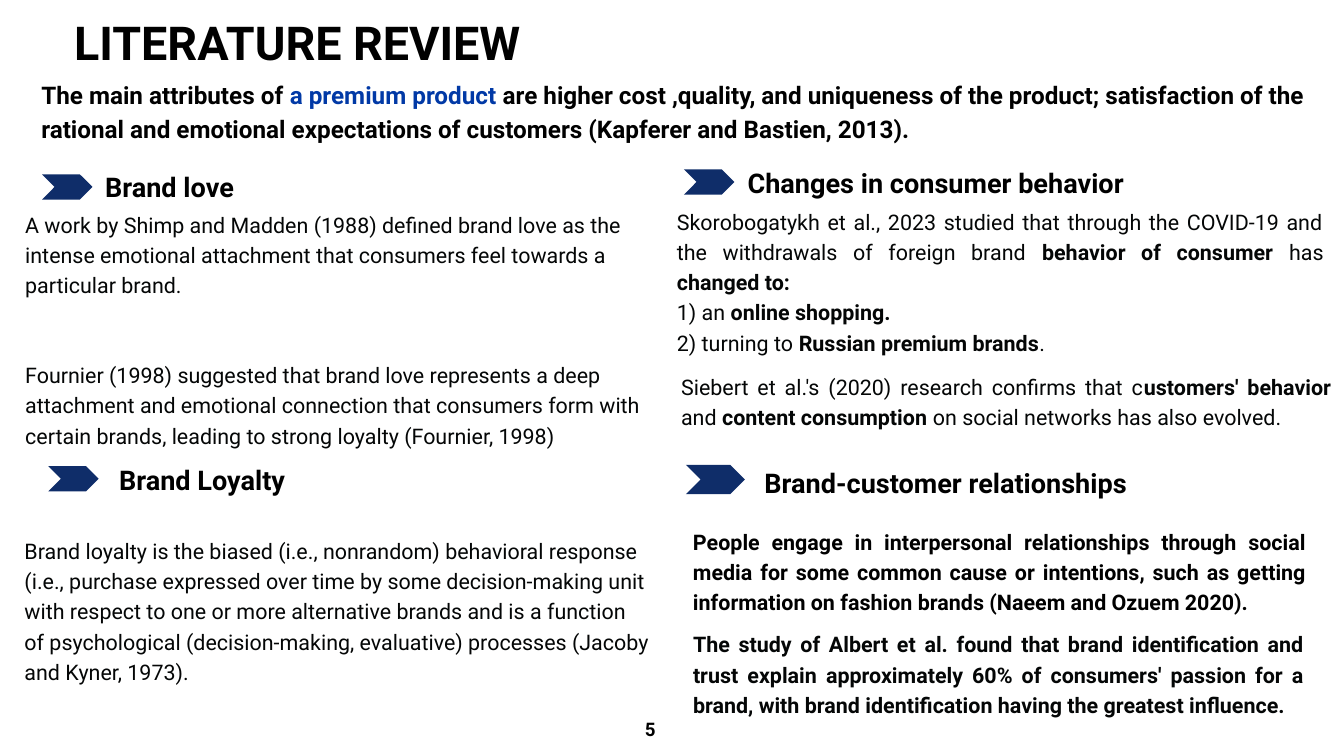
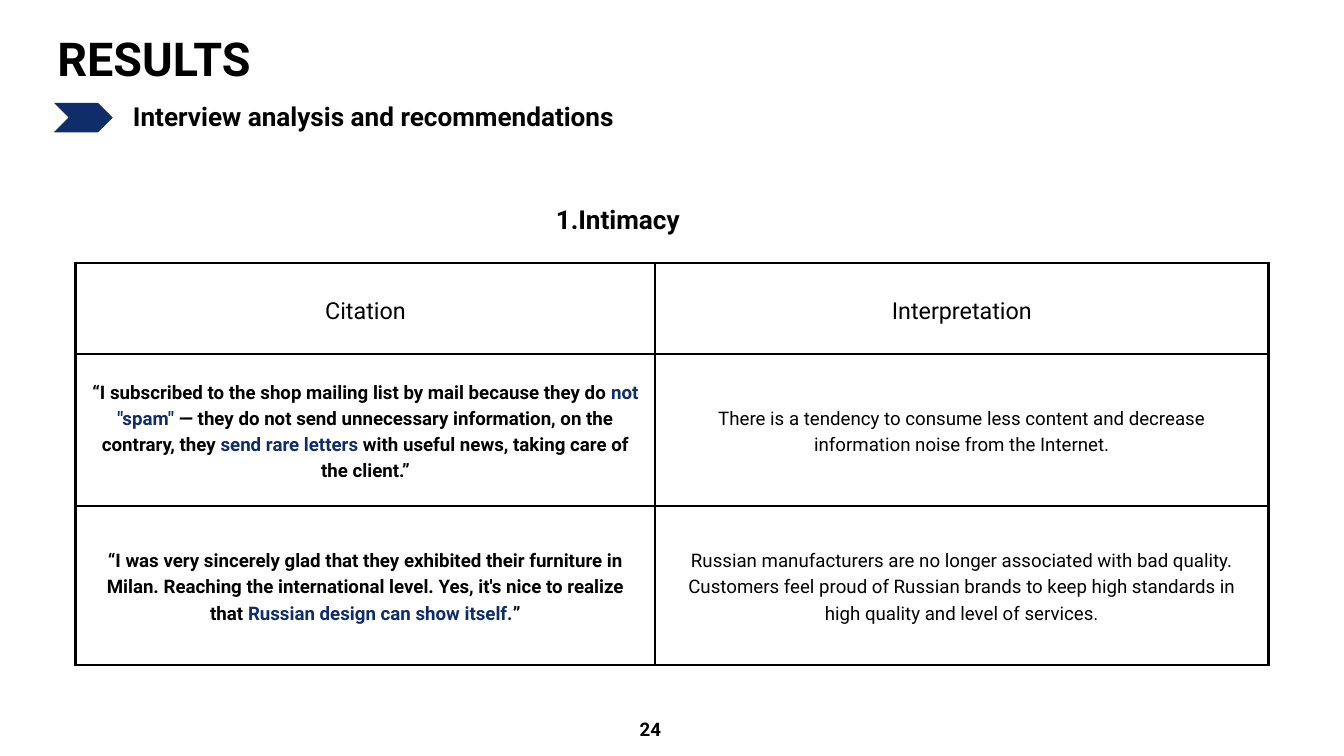
from dataclasses import dataclass, replace
from typing import Any, NamedTuple

from pptx import Presentation
from pptx.dml.color import RGBColor
from pptx.enum.text import MSO_ANCHOR as Anchor, PP_ALIGN as Align
from pptx.oxml import parse_xml
from pptx.oxml.ns import nsdecls
from pptx.slide import Slide
from pptx.table import _Cell as Cell
from pptx.text.text import TextFrame
from pptx.util import Emu, Pt

EMU_PER_PX = 9525


def px(length: int) -> Emu:
    return Emu(length * EMU_PER_PX)


@dataclass(frozen=True)
class TextStyle:
    size: int
    leading: float
    color: str
    bold: bool = False
    align: Align = Align.LEFT


@dataclass(frozen=True)
class Theme:
    font: str = "Roboto"
    ink: str = "000000"
    body_ink: str = "040606"
    navy: str = "0F2D69"
    blue: str = "0139A6"
    rule_width: int = 3
    title: TextStyle = TextStyle(50, 55.5, ink, True)
    intro: TextStyle = TextStyle(26, 36.4, ink, True)
    heading: TextStyle = TextStyle(29, 40.6, ink, True)
    subtitle: TextStyle = TextStyle(28, 39.2, ink, True)
    body: TextStyle = TextStyle(23, 32.2, body_ink)
    justified: TextStyle = replace(body, align=Align.JUSTIFY)
    finding: TextStyle = replace(justified, bold=True)
    page_number: TextStyle = TextStyle(20, 22.2, ink, True, Align.CENTER)
    column_head: TextStyle = TextStyle(25, 35, ink, align=Align.CENTER)
    interpretation: TextStyle = TextStyle(20, 28, ink, align=Align.CENTER)
    citation: TextStyle = replace(interpretation, bold=True)


THEME = Theme()


class Area(NamedTuple):
    left: int
    top: int
    width: int
    height: int


class Run(NamedTuple):
    text: str
    bold: bool | None = None
    color: str | None = None


Paragraph = list[Run]


class Passage(NamedTuple):
    area: Area
    style: TextStyle
    paragraphs: list[Paragraph]
    gap: float = 0


class Heading(NamedTuple):
    text: str
    left: int
    top: int
    arrow_left: int
    arrow_top: int
    arrow_height: int = 36
    style: TextStyle = THEME.heading


def plain(text: str) -> list[Paragraph]:
    return [[Run(text)]]


def strong(text: str) -> Run:
    return Run(text, bold=True)


def accent(text: str) -> Run:
    return Run(text, color=THEME.navy)


PREMIUM = Passage(Area(59, 108, 1819, 94), THEME.intro, [[
    Run("The main attributes of "),
    Run("a premium product", color=THEME.blue),
    Run(" are higher cost ,quality, and uniqueness of the product; satisfaction of the "
        "rational and emotional expectations of customers (Kapferer and Bastien, 2013)."),
]])
BRAND_LOVE = Passage(Area(36, 297, 924, 335), THEME.body, [
    [Run("A work by Shimp and Madden (1988) defined brand love as the intense emotional "
         "attachment that consumers feel towards a particular brand.")],
    [Run("Fournier (1998) suggested that brand love represents a deep attachment and "
         "emotional connection that consumers form with certain brands, leading to strong "
         "loyalty (Fournier, 1998)")],
], gap=2 * THEME.body.leading)
BRAND_LOYALTY = Passage(Area(35, 763, 895, 209), THEME.body, plain(
    "Brand loyalty is the biased (i.e., nonrandom) behavioral response (i.e., purchase "
    "expressed over time by some decision-making unit with respect to one or more "
    "alternative brands and is a function of psychological (decision-making, evaluative) "
    "processes (Jacoby and Kyner, 1973)."))
BEHAVIOR = Passage(Area(967, 293, 924, 335), THEME.justified, [
    [Run("Skorobogatykh et al., 2023 studied that through the COVID-19 and the withdrawals "
         "of foreign brand "),
     strong("behavior of consumer"), Run(" has "), strong("changed to:")],
    [Run("1) an"), strong(" online shopping.")],
    [Run("2) turning to "), strong("Russian premium brands"), Run(".")],
])
CONTENT_CONSUMPTION = Passage(Area(973, 528, 929, 125), THEME.justified, [[
    Run("Siebert et al.'s (2020) research confirms that c"),
    strong("ustomers' behavior "), Run("and "), strong("content consumption "),
    Run("on social networks has also evolved."),
]])
SOCIAL_MEDIA = Passage(
    Area(990, 749, 877, 167), replace(THEME.finding, color=THEME.ink), plain(
        "People engage in interpersonal relationships through social media for some common "
        "cause or intentions, such as getting information on fashion brands (Naeem and "
        "Ozuem 2020)."))
IDENTIFICATION = Passage(Area(990, 896, 874, 125), THEME.finding, plain(
    "The study of Albert et al. found that brand identification and trust explain "
    "approximately 60% of consumers' passion for a brand, with brand identification having "
    "the greatest influence."))
REVIEW_PASSAGES = [PREMIUM, BRAND_LOVE, BRAND_LOYALTY, BEHAVIOR, CONTENT_CONSUMPTION,
                   SOCIAL_MEDIA, IDENTIFICATION]

REVIEW_HEADINGS = [
    Heading("Brand love", 150, 236, 60, 249),
    Heading("Brand Loyalty", 170, 654, 69, 666),
    Heading("Changes in consumer behavior", 1068, 230, 977, 242),
    Heading("Brand-customer relationships", 1092, 658, 980, 664, 42),
]
INTERVIEWS = Heading("Interview analysis and recommendations", 190, 136, 77, 147, 42,
                     THEME.subtitle)
INTIMACY = Passage(Area(794, 283, 1019, 55), THEME.subtitle, plain("1.Intimacy"))

FINDINGS_LEFT, FINDINGS_TOP = 108, 376
FINDINGS_COLUMNS = [828, 876]
FINDINGS_ROWS = [130, 217, 227]
FINDINGS: list[list[Paragraph]] = [
    [[Run("Citation")], [Run("Interpretation")]],
    [[Run("“I subscribed to the shop mailing list by mail because they do "),
      accent("not \"spam\" "),
      Run("— they do not send unnecessary information, on the contrary, they "),
      accent("send rare letters "),
      Run("with useful news, taking care of the client.”")],
     [Run("There is a tendency to consume less content and decrease information noise from "
          "the Internet.")]],
    [[Run("“I was very sincerely glad that they exhibited their furniture in Milan. Reaching "
          "the international level. Yes, it's nice to realize that "),
      accent("Russian design can show itself."), Run("”")],
     [Run("Russian manufacturers are no longer associated with bad quality. Customers feel "
          "proud of Russian brands to keep high standards in high quality and level of "
          "services.")]],
]


def apply_format(target: Any, values: dict[str, Any]) -> None:
    for attribute, value in values.items():
        setattr(target, attribute, value)


def set_margins(target: Any, margin: int) -> None:
    sides = ("left", "top", "right", "bottom")
    apply_format(target, {f"margin_{side}": px(margin) for side in sides})


def write(frame: TextFrame, style: TextStyle, paragraphs: list[Paragraph],
          gap: float = 0) -> None:
    """Fill the frame, leaving gap points between paragraphs."""
    frame.word_wrap = True
    for index, runs in enumerate(paragraphs):
        paragraph = frame.add_paragraph() if index else frame.paragraphs[0]
        apply_format(paragraph, {
            "alignment": style.align,
            "line_spacing": Pt(style.leading),
            "space_before": Pt(gap if index else 0),
        })
        for words in runs:
            run = paragraph.add_run()
            run.text = words.text
            apply_format(run.font, {
                "name": THEME.font,
                "size": Pt(style.size),
                "bold": style.bold if words.bold is None else words.bold,
            })
            run.font.color.rgb = RGBColor.from_string(words.color or style.color)


def add_passage(slide: Slide, passage: Passage) -> None:
    frame = slide.shapes.add_textbox(*map(px, passage.area)).text_frame
    set_margins(frame, 0)
    write(frame, passage.style, passage.paragraphs, passage.gap)


def add_arrow(slide: Slide, left: int, top: int, height: int) -> None:
    """Draw a notched arrow twice as wide as high."""
    half, right, bottom = height // 2, left + 2 * height, top + height
    outline = slide.shapes.build_freeform(left, top, scale=EMU_PER_PX)
    outline.add_line_segments([
        (right - half, top), (right, top + half), (right - half, bottom),
        (left, bottom), (left + half, top + half),
    ])
    arrow = outline.convert_to_shape()
    arrow.shadow.inherit = False
    arrow.fill.solid()
    arrow.fill.fore_color.rgb = RGBColor.from_string(THEME.navy)
    arrow.line.fill.background()


def add_heading(slide: Slide, heading: Heading) -> None:
    add_arrow(slide, heading.arrow_left, heading.arrow_top, heading.arrow_height)
    add_passage(slide, Passage(Area(heading.left, heading.top, 810, 56), heading.style,
                               plain(heading.text)))


def add_titled_slide(deck: Any, title: str, left: int, top: int, number: int) -> Slide:
    slide = deck.slides.add_slide(deck.slide_layouts[6])
    add_passage(slide, Passage(Area(left, top, 760, 82), THEME.title, plain(title)))
    add_passage(slide, Passage(Area(911, 1028, 36, 30), THEME.page_number,
                               plain(str(number))))
    return slide


def rule_cell(cell: Cell) -> None:
    """Draw the four borders of a cell."""
    properties = cell._tc.get_or_add_tcPr()
    for position, side in enumerate("LRTB"):
        properties.insert(position, parse_xml(
            f'<a:ln{side} {nsdecls("a")} w="{Pt(THEME.rule_width)}"><a:solidFill>'
            f'<a:srgbClr val="{THEME.ink}"/></a:solidFill></a:ln{side}>'))


def add_findings(slide: Slide) -> None:
    area = Area(FINDINGS_LEFT, FINDINGS_TOP, sum(FINDINGS_COLUMNS), sum(FINDINGS_ROWS))
    table = slide.shapes.add_table(len(FINDINGS_ROWS), len(FINDINGS_COLUMNS),
                                   *map(px, area)).table
    apply_format(table, {"first_row": False, "horz_banding": False})
    for column, width in zip(table.columns, FINDINGS_COLUMNS):
        column.width = px(width)
    for row, height in zip(table.rows, FINDINGS_ROWS):
        row.height = px(height)
    styles = [[THEME.column_head] * 2] + [[THEME.citation, THEME.interpretation]] * 2
    for row, contents, row_styles in zip(table.rows, FINDINGS, styles):
        for cell, runs, style in zip(row.cells, contents, row_styles):
            cell.vertical_anchor = Anchor.MIDDLE
            set_margins(cell, 20)
            cell.fill.background()
            rule_cell(cell)
            write(cell.text_frame, style, [runs])


def main() -> None:
    deck = Presentation()
    apply_format(deck, {"slide_width": px(1920), "slide_height": px(1080)})

    review = add_titled_slide(deck, "LITERATURE REVIEW", 106, 26, 5)
    for heading in REVIEW_HEADINGS:
        add_heading(review, heading)
    for passage in REVIEW_PASSAGES:
        add_passage(review, passage)

    results = add_titled_slide(deck, "RESULTS", 82, 48, 24)
    add_heading(results, INTERVIEWS)
    add_passage(results, INTIMACY)
    add_findings(results)

    deck.save("out.pptx")


if __name__ == "__main__":
    main()
